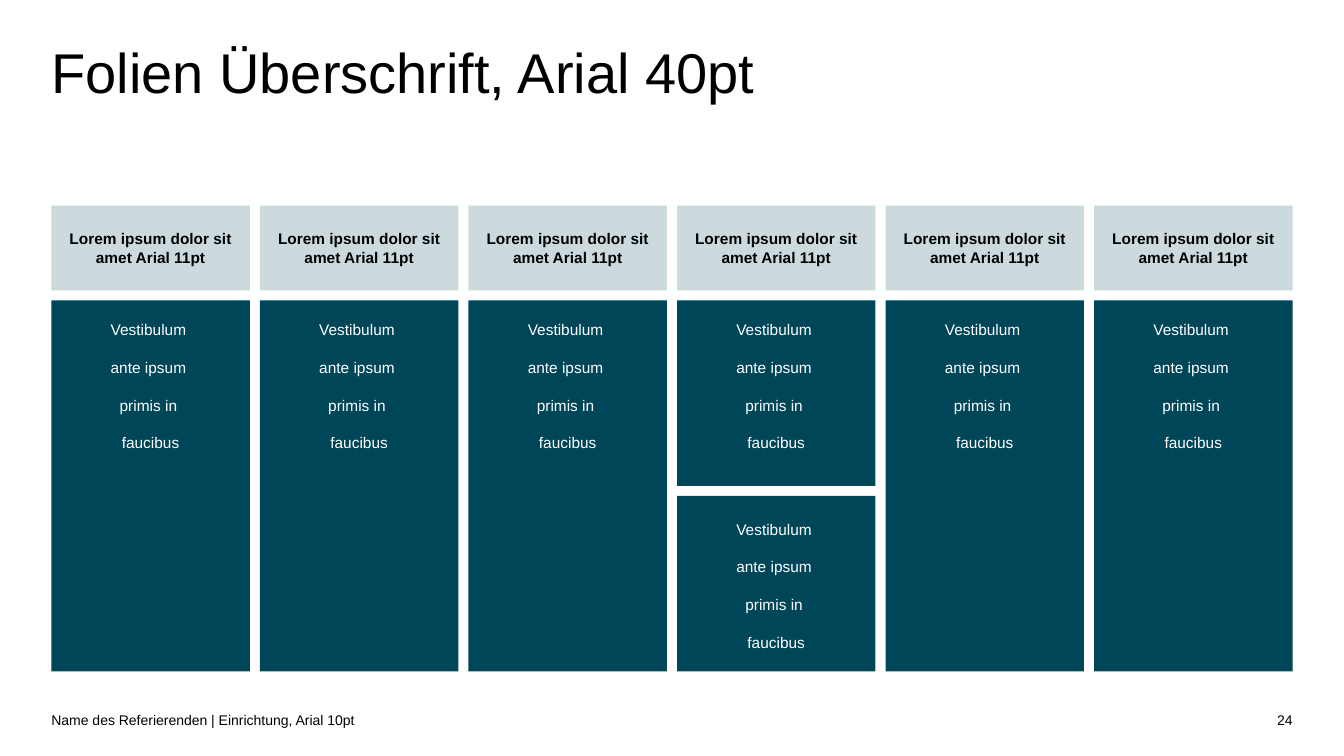
"""Build a slide with six headed columns, the fourth one split in two."""
from dataclasses import dataclass

from pptx import Presentation
from pptx.dml.color import RGBColor
from pptx.enum.shapes import MSO_SHAPE
from pptx.enum.text import MSO_ANCHOR, PP_ALIGN
from pptx.slide import Slide
from pptx.text.text import TextFrame
from pptx.util import Inches, Pt

RECTANGLE = MSO_SHAPE.RECTANGLE
TOP, MIDDLE, BOTTOM = MSO_ANCHOR.TOP, MSO_ANCHOR.MIDDLE, MSO_ANCHOR.BOTTOM
LEFT, CENTER, RIGHT = PP_ALIGN.LEFT, PP_ALIGN.CENTER, PP_ALIGN.RIGHT


@dataclass(frozen=True)
class Theme:
    """Colours, font and type sizes of the slide."""
    font: str = "Arial"
    ink: str = "000000"
    paper: str = "FFFFFF"
    header: str = "CCDADE"
    body: str = "004659"
    title_size: float = 40
    cell_size: float = 11
    footer_size: float = 10
    line_gap: float = 13.7


@dataclass(frozen=True)
class Grid:
    """Equal columns under a header row, in inches."""
    left: float = 0.51
    width: float = 12.31
    columns: int = 6
    gap: float = 0.1
    header_top: float = 2.04
    header_height: float = 0.84
    body_height: float = 3.68

    @property
    def column_width(self) -> float:
        """Width of one column."""
        return (self.width - self.gap * (self.columns - 1)) / self.columns

    @property
    def body_top(self) -> float:
        """Top edge of the body row."""
        return self.header_top + self.header_height + self.gap

    def column_left(self, column: int) -> float:
        """Left edge of a column."""
        return self.left + column * (self.column_width + self.gap)


@dataclass(frozen=True)
class Block:
    """A piece of text with its place, and a fill if it is a cell."""
    lines: tuple[str, ...]
    left: float
    top: float
    width: float
    height: float
    size: float
    color: str
    fill: str = ""
    bold: bool = False
    align: PP_ALIGN = LEFT
    anchor: MSO_ANCHOR = MIDDLE
    insets: tuple[float, float, float, float] = (0, 0, 0, 0)


THEME = Theme()
GRID = Grid()
HEADER_LINES = ("Lorem ipsum dolor sit amet Arial 11pt",)
BODY_LINES = ("Vestibulum ", "ante ipsum ", "primis in ", "faucibus")
SPLIT_COLUMN = 3


def write_text(frame: TextFrame, block: Block) -> None:
    """Fill a text frame with the lines of a block."""
    left, top, right, bottom = (Inches(inset) for inset in block.insets)
    frame_format = {
        "word_wrap": True, "vertical_anchor": block.anchor,
        "margin_left": left, "margin_top": top,
        "margin_right": right, "margin_bottom": bottom,
    }
    for name, value in frame_format.items():
        setattr(frame, name, value)
    font_format = {"name": THEME.font, "size": Pt(block.size), "bold": block.bold}
    for index, line in enumerate(block.lines):
        para = frame.add_paragraph() if index else frame.paragraphs[0]
        para.alignment = block.align
        para.space_before = Pt(THEME.line_gap if index else 0)
        span = para.add_run()
        span.text = line
        for name, value in font_format.items():
            setattr(span.font, name, value)
        span.font.color.rgb = RGBColor.from_string(block.color)


def draw_block(page: Slide, block: Block) -> None:
    """Draw a block as a filled rectangle or as a plain text box."""
    place = [Inches(value) for value in (block.left, block.top, block.width, block.height)]
    if block.fill:
        box = page.shapes.add_shape(RECTANGLE, *place)
        box.shadow.inherit = False
        box.fill.solid()
        box.fill.fore_color.rgb = RGBColor.from_string(block.fill)
        box.line.fill.background()
    else:
        box = page.shapes.add_textbox(*place)
    write_text(box.text_frame, block)


def header_cell(column: int) -> Block:
    """Describe the header of a column."""
    return Block(HEADER_LINES, GRID.column_left(column), GRID.header_top,
                 GRID.column_width, GRID.header_height, THEME.cell_size, THEME.ink,
                 THEME.header, bold=True, align=CENTER, insets=(0.1, 0.05, 0.1, 0.05))


def body_cell(column: int, top: float, height: float, anchor: MSO_ANCHOR = TOP) -> Block:
    """Describe a body cell, with the wider inset on the anchored side."""
    insets = (0.1, 0.2, 0.1, 0.1) if anchor == TOP else (0.1, 0.1, 0.1, 0.2)
    return Block(BODY_LINES, GRID.column_left(column), top, GRID.column_width, height,
                 THEME.cell_size, THEME.paper, THEME.body, align=CENTER,
                 anchor=anchor, insets=insets)


def column_cells(column: int) -> list[Block]:
    """List the cells of one column from top to bottom."""
    header = header_cell(column)
    if column != SPLIT_COLUMN:
        return [header, body_cell(column, GRID.body_top, GRID.body_height)]
    half = GRID.body_height / 2
    lower_top = GRID.body_top + half + GRID.gap
    return [header, body_cell(column, GRID.body_top, half),
            body_cell(column, lower_top, half - GRID.gap, BOTTOM)]


def main() -> None:
    """Build and save the deck."""
    deck = Presentation()
    deck.slide_width, deck.slide_height = Inches(13.33), Inches(7.5)
    page = deck.slides.add_slide(deck.slide_layouts[6])
    number_width = GRID.width / 8
    footer_width = GRID.width - number_width
    blocks = [
        Block(("Folien Überschrift, Arial 40pt",), GRID.left, 0.37, GRID.width, 1.54,
              THEME.title_size, THEME.ink, anchor=TOP),
        Block(("Name des Referierenden | Einrichtung, Arial 10pt",), GRID.left, 6.99,
              footer_width, 0.31, THEME.footer_size, THEME.ink),
        Block(("24",), GRID.left + footer_width, 6.99, number_width, 0.31,
              THEME.footer_size, THEME.ink, align=RIGHT),
    ]
    for column in range(GRID.columns):
        blocks += column_cells(column)
    for block in blocks:
        draw_block(page, block)
    deck.save("out.pptx")


if __name__ == "__main__":
    main()
